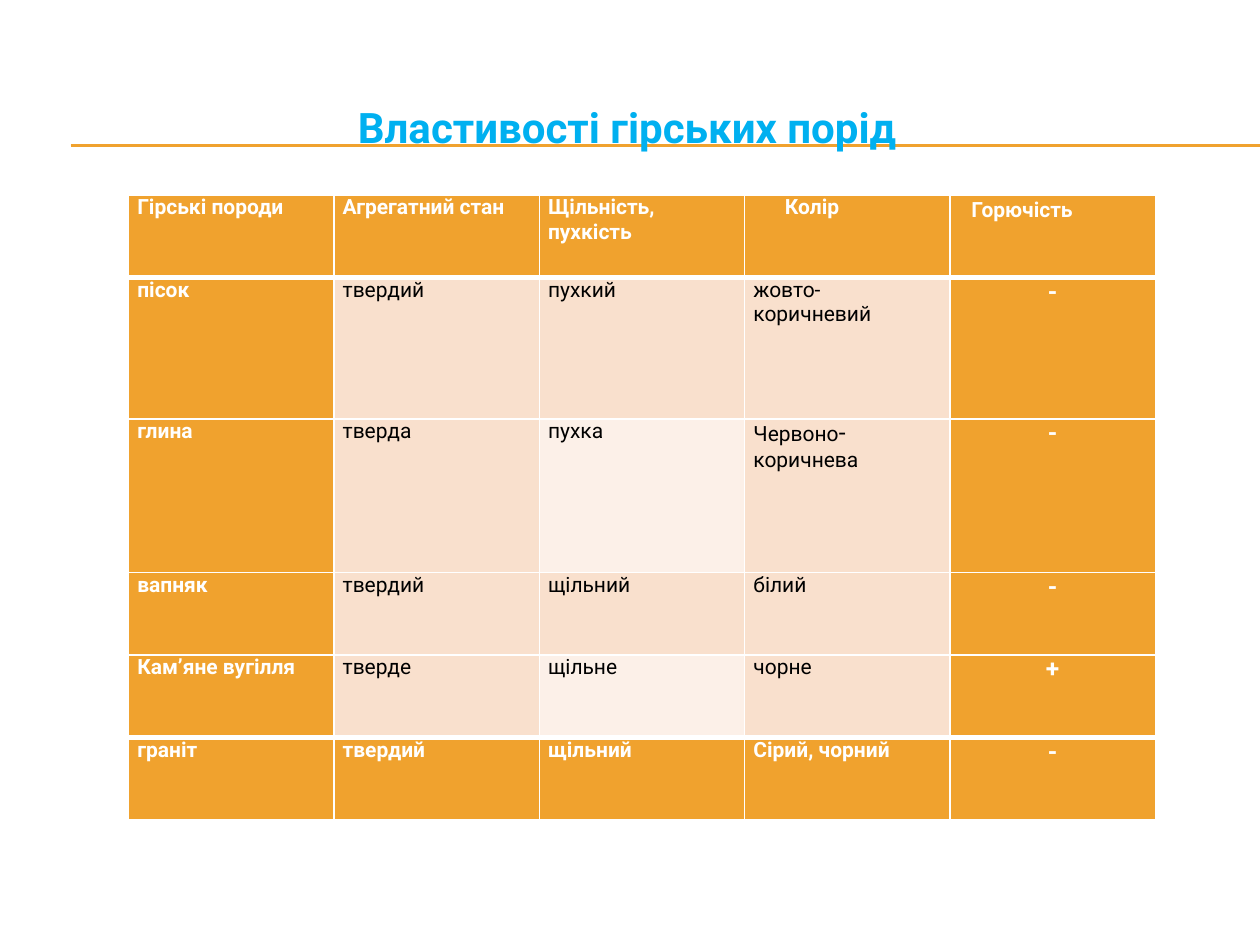
from pptx import Presentation
from pptx import util as u
from pptx.dml.color import RGBColor
from pptx.enum import shapes, text
from pptx.oxml.ns import qn
from lxml import etree

COLORS = {
    "accent": "F0A22E",
    "band": "F9E0CD",
    "light": "FCF0E8",
    "title": "00B0F0",
    "white": "FFFFFF",
    "black": "000000",
}
FONT = "Roboto"
MARKS = ("-", "+")
ROCKS = [
    ["Гірські породи", "Агрегатний стан", "Щільність, пухкість", "Колір", "Горючість"],
    ["пісок", "твердий", "пухкий", "жовто- коричневий", "-"],
    ["глина", "тверда", "пухка", ("Червоно", "-", "коричнева"), "-"],
    ["вапняк", "твердий", "щільний", "білий", "-"],
    ["Кам’яне вугілля", "тверде", "щільне", "чорне", "+"],
    ["граніт", "твердий", "щільний", "Сірий, чорний", "-"],
]
LAST_ROW, LAST_COLUMN = len(ROCKS) - 1, len(ROCKS[0]) - 1
TABLE_WIDTH, TABLE_HEIGHT = 8.15, 4.96
TALL_ROWS = {1: 1.12, 2: 1.22}
HEADER_INDENTS = {3: 0.25, 4: 0.1}


def color(name):
    """Return the palette colour of that name."""
    return RGBColor.from_string(COLORS[name])


def format_run(run, size, color_name, bold):
    """Set the font, size, colour and weight of a run."""
    run.font.name = FONT
    run.font.size = u.Pt(size)
    run.font.bold = bold
    run.font.color.rgb = color(color_name)


def add_rule(slide, slide_width, top):
    """Draw a thin line from the left margin to the slide's right edge."""
    line = slide.shapes.add_connector(
        shapes.MSO_CONNECTOR.STRAIGHT, u.Inches(0.56), u.Inches(top), slide_width, u.Inches(top)
    )
    line.line.color.rgb = color("accent")
    line.line.width = u.Pt(0.75)
    etree.SubElement(line._element.spPr, qn("a:effectLst"))


def add_title(slide, title):
    """Add the slide's heading."""
    box = slide.shapes.add_textbox(u.Inches(2.32), u.Inches(0.76), u.Inches(5.2), u.Inches(0.5))
    frame = box.text_frame
    frame.word_wrap = True
    frame.margin_left = u.Inches(0.52)
    frame.text = title
    format_run(frame.paragraphs[0].runs[0], 24, "title", True)


def add_borders(cell, row):
    """Give a cell white borders, thick below the header and above the last row."""
    widths = {
        "L": 1,
        "R": 1,
        "T": 3 if row in (1, LAST_ROW) else 1,
        "B": 3 if row in (0, LAST_ROW - 1) else 1,
    }
    properties = cell._tc.get_or_add_tcPr()
    for side, width in widths.items():
        border = etree.SubElement(properties, qn(f"a:ln{side}"), w=str(u.Pt(width)))
        fill = etree.SubElement(border, qn("a:solidFill"))
        etree.SubElement(fill, qn("a:srgbClr"), val=COLORS["white"])


def fill_name(row, column):
    """Return the fill of a cell: accent around the edge, bands inside."""
    if row in (0, LAST_ROW) or column in (0, LAST_COLUMN):
        return "accent"
    return "light" if column == 2 and row % 2 == 0 else "band"


def write_cell(cell, row, column, content):
    """Format one cell and write its runs, with larger marks."""
    add_borders(cell, row)
    name = fill_name(row, column)
    cell.fill.solid()
    cell.fill.fore_color.rgb = color(name)
    indent = HEADER_INDENTS.get(column, 0) if row == 0 else 0
    cell.margin_left = u.Inches(0.07 + indent)
    cell.margin_right = u.Inches(0.07)
    cell.margin_top = u.Inches(0.02 if row == 0 and column == LAST_COLUMN else 0)
    cell.margin_bottom = 0
    paragraph = cell.text_frame.paragraphs[0]
    centered = content in MARKS
    paragraph.alignment = text.PP_ALIGN.CENTER if centered else text.PP_ALIGN.JUSTIFY
    strong = name == "accent"
    for part in (content,) if isinstance(content, str) else content:
        run = paragraph.add_run()
        run.text = part
        format_run(run, 14 if part in MARKS else 12, "white" if strong else "black", strong)


def add_rock_table(slide):
    """Add the table of rock properties."""
    frame = slide.shapes.add_table(
        len(ROCKS), len(ROCKS[0]),
        u.Inches(1.02), u.Inches(1.55), u.Inches(TABLE_WIDTH), u.Inches(TABLE_HEIGHT),
    )
    table = frame.table
    short_height = (TABLE_HEIGHT - sum(TALL_ROWS.values())) / (len(ROCKS) - len(TALL_ROWS))
    for column in table.columns:
        column.width = u.Inches(TABLE_WIDTH / len(ROCKS[0]))
    for row, contents in enumerate(ROCKS):
        table.rows[row].height = u.Inches(TALL_ROWS.get(row, short_height))
        for column, content in enumerate(contents):
            write_cell(table.cell(row, column), row, column, content)


def main():
    """Build and save the slide."""
    presentation = Presentation()
    presentation.slide_width = u.Inches(10)
    presentation.slide_height = u.Inches(7.5)
    slide = presentation.slides.add_slide(presentation.slide_layouts[6])
    for top in (1.15, 1.16):
        add_rule(slide, presentation.slide_width, top)
    add_rock_table(slide)
    add_title(slide, "Властивості гірських порід")
    presentation.save("out.pptx")


if __name__ == "__main__":
    main()
